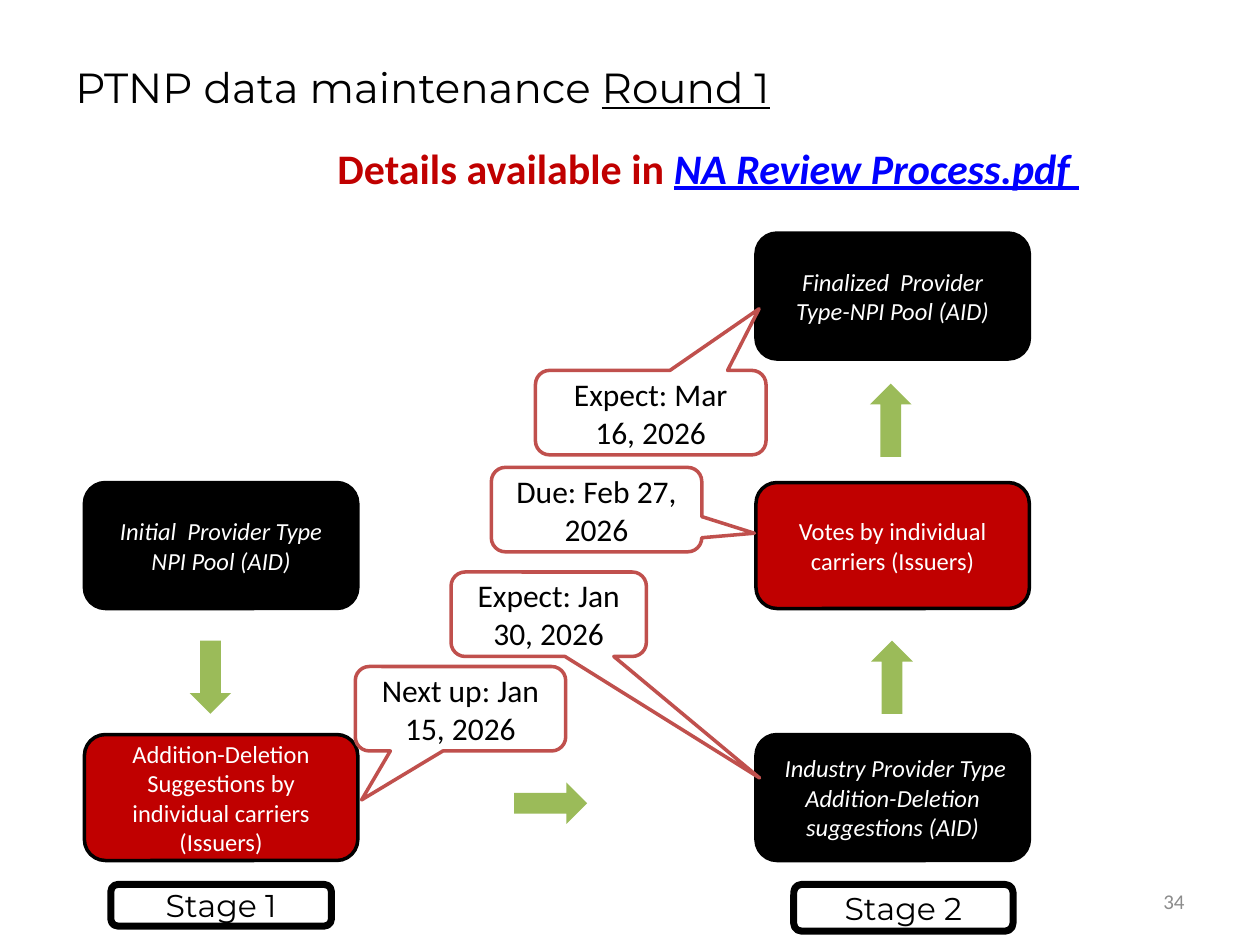
"""Build the two-stage data maintenance flow slide."""
import pptx
import pptx.dml.color
import pptx.enum.shapes
import pptx.enum.text
import pptx.util

RGB = pptx.dml.color.RGBColor
SHAPE = pptx.enum.shapes.MSO_SHAPE
ALIGN = pptx.enum.text.PP_ALIGN
ANCHOR = pptx.enum.text.MSO_ANCHOR
Inches = pptx.util.Inches
Pt = pptx.util.Pt

BLACK = RGB(0x00, 0x00, 0x00)
WHITE = RGB(0xFF, 0xFF, 0xFF)
RED = RGB(0xC0, 0x00, 0x00)
GREEN = RGB(0x9B, 0xBB, 0x59)
CALLOUT_LINE = RGB(0xC0, 0x50, 0x4D)
LINK_BLUE = RGB(0x00, 0x00, 0xFF)
GREY = RGB(0x8C, 0x8C, 0x8C)

COLUMNS = (0.67, 6)
ROWS = (1.85, 3.83, 5.83)
STEP_SIZE = (2.17, 1)
ARROW_SIZE = (0.58, 0.33)
CALLOUT_HEIGHT = 0.67

TITLE_FORMAT = {"name": "Montserrat", "size": Pt(24), "color": BLACK}
DETAILS_FORMAT = {"name": "Calibri", "size": Pt(24), "bold": True, "color": RED}
NUMBER_FORMAT = {"name": "Calibri", "size": Pt(12), "color": GREY}
STEP_FORMAT = {"name": "Calibri", "size": Pt(14), "color": WHITE}
CALLOUT_FORMAT = {"name": "Calibri", "size": Pt(18), "color": BLACK}
STAGE_FORMAT = {"name": "Montserrat", "size": Pt(18), "color": BLACK}

TEXTS = [
    ((0.5, 0.3, 7.5, 0.78), ANCHOR.MIDDLE, ALIGN.LEFT, [
        ("PTNP data maintenance ", TITLE_FORMAT),
        ("Round 1", {**TITLE_FORMAT, "underline": True})]),
    ((7.17, 6.95, 2.33, 0.4), ANCHOR.MIDDLE, ALIGN.RIGHT, [("34", NUMBER_FORMAT)]),
    ((2.58, 1.08, 6.92, 0.5), ANCHOR.TOP, ALIGN.LEFT, [
        ("Details available in ", DETAILS_FORMAT),
        ("NA Review Process.pdf ", {**DETAILS_FORMAT, "color": LINK_BLUE,
                                    "italic": True, "underline": True})]),
]
STEPS = [
    (0, 1, "Initial  Provider Type NPI Pool (AID)", True),
    (0, 2, "Addition-Deletion Suggestions by individual carriers (Issuers)", False),
    (1, 2, " Industry Provider Type Addition-Deletion suggestions (AID)", True),
    (1, 1, "Votes by individual carriers (Issuers)", False),
    (1, 0, "Finalized  Provider Type-NPI Pool (AID)", True),
]
ARROWS = [(1.38, 5.21, 90), (4.08, 6.21, 0), (6.79, 5.21, 270), (6.78, 3.17, 270)]
CALLOUTS = [
    ("Next up: Jan 15, 2026", 2.82, 5.29, 1.67, (-0.47, 1.08)),
    ("Due: Feb 27, 2026", 3.9, 3.71, 1.67, (0.75, 0.28)),
    ("Expect: Mar 16, 2026", 4.25, 2.94, 1.83, (0.47, -1.23)),
    ("Expect: Jan 30, 2026", 3.58, 4.54, 1.55, (1.08, 1.94)),
]
STAGES = [("Stage 1", (0.88, 7.02, 1.75, 0.33)), ("Stage 2", (6.3, 7.02, 1.74, 0.37))]


def write(box, spans, anchor=ANCHOR.MIDDLE, align=ALIGN.CENTER):
    """Fill a box with one paragraph of formatted spans."""
    frame = box.text_frame
    frame.word_wrap = True
    frame.vertical_anchor = anchor
    para = frame.paragraphs[0]
    para.alignment = align
    for text, values in spans:
        span = para.add_run()
        span.text = text
        for key, value in values.items():
            if key == "color":
                span.font.color.rgb = value
            else:
                setattr(span.font, key, value)


def add_shape(page, kind, place, fill, line=None, width=2):
    """Add a flat preset shape, outlined when a line colour is given."""
    shape = page.shapes.add_shape(kind, *map(Inches, place))
    shape.shadow.inherit = False
    shape.fill.solid()
    shape.fill.fore_color.rgb = fill
    if line is None:
        shape.line.fill.background()
    else:
        shape.line.color.rgb = line
        shape.line.width = Pt(width)
    return shape


def main():
    """Draw the slide and save it."""
    deck = pptx.Presentation()
    deck.slide_width, deck.slide_height = Inches(10), Inches(7.5)
    page = deck.slides.add_slide(deck.slide_layouts[6])

    for place, anchor, align, spans in TEXTS:
        write(page.shapes.add_textbox(*map(Inches, place)), spans, anchor, align)

    for column, row, text, by_agency in STEPS:
        place = (COLUMNS[column], ROWS[row], *STEP_SIZE)
        step = add_shape(page, SHAPE.ROUNDED_RECTANGLE, place,
                         BLACK if by_agency else RED, BLACK)
        write(step, [(text, {**STEP_FORMAT, "italic": by_agency})])

    for left, top, rotation in ARROWS:
        arrow = add_shape(page, SHAPE.RIGHT_ARROW, (left, top, *ARROW_SIZE), GREEN)
        arrow.rotation = rotation

    for text, place in STAGES:
        stage = add_shape(page, SHAPE.ROUNDED_RECTANGLE, place, WHITE, BLACK, 4)
        write(stage, [(text, STAGE_FORMAT)])

    for text, left, top, width, tip in CALLOUTS:
        callout = add_shape(page, SHAPE.ROUNDED_RECTANGULAR_CALLOUT,
                            (left, top, width, CALLOUT_HEIGHT), WHITE, CALLOUT_LINE)
        for index, offset in enumerate(tip):
            callout.adjustments[index] = offset
        write(callout, [(text, CALLOUT_FORMAT)])

    deck.save("out.pptx")


if __name__ == "__main__":
    main()
